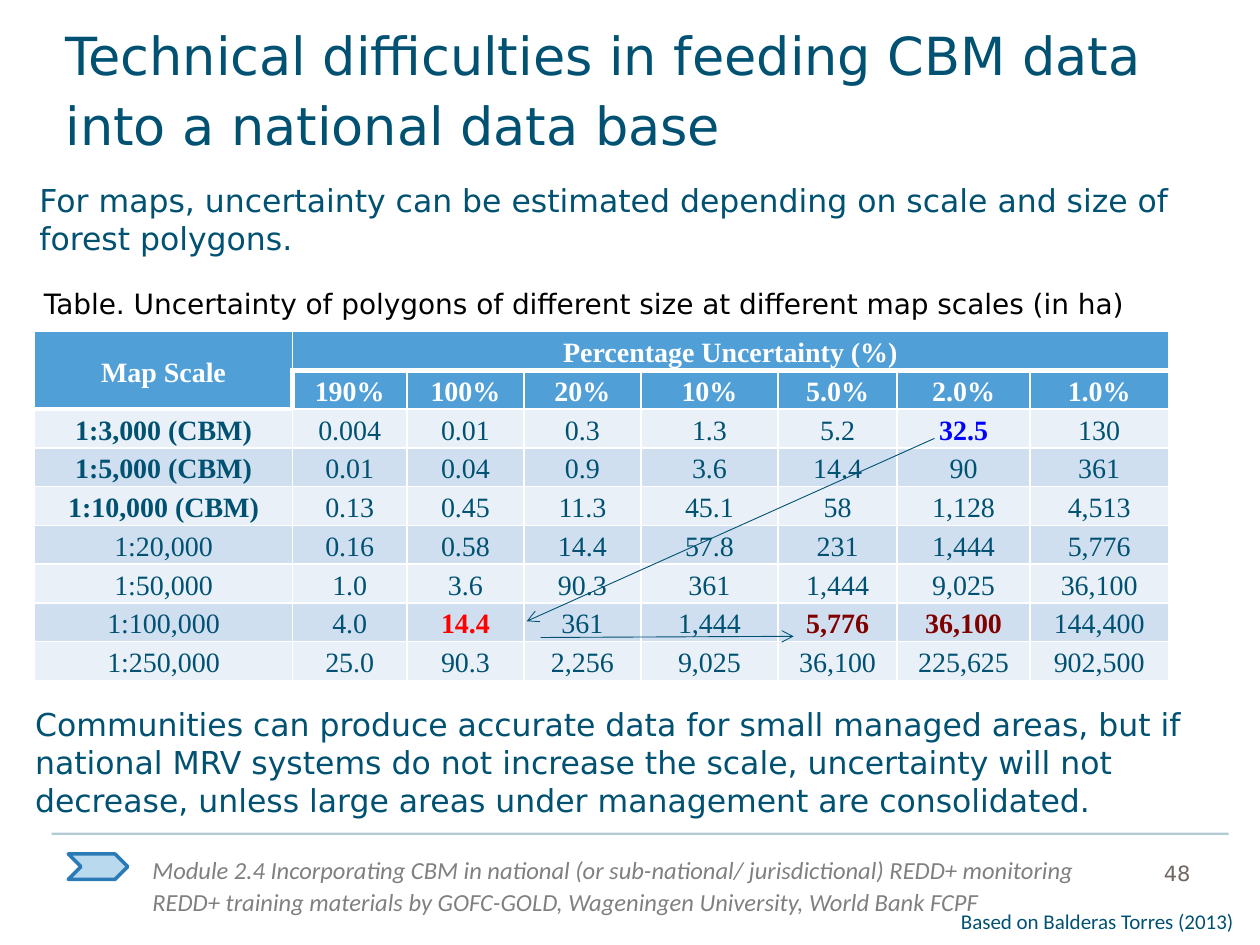
from lxml.etree import SubElement
from pptx import Presentation
from pptx.dml.color import RGBColor
from pptx.enum.shapes import MSO_CONNECTOR, MSO_SHAPE
from pptx.enum.text import MSO_ANCHOR, MSO_AUTO_SIZE, PP_ALIGN
from pptx.oxml.ns import qn
from pptx.util import Pt

NAVY, WHITE, HEADER_BLUE = "005172", "FFFFFF", "519FD7"
BANDS = ["E9F0F8", "D0DFF0"]


def color(value):
    return RGBColor.from_string(value)


def add_text(box, lines, size, font="DejaVu Sans", fill=NAVY, italic=None, spacing=None, wrap=True):
    """Add a text box; box is left, top, width, height in points."""
    shape = slide.shapes.add_textbox(*map(Pt, box))
    frame = shape.text_frame
    frame.word_wrap = wrap
    frame.auto_size = MSO_AUTO_SIZE.SHAPE_TO_FIT_TEXT
    for index, line in enumerate(lines):
        paragraph = frame.add_paragraph() if index else frame.paragraphs[0]
        if spacing:
            paragraph.line_spacing = Pt(spacing)
        run = paragraph.add_run()
        run.text = line
        run.font.name, run.font.size, run.font.italic = font, Pt(size), italic
        run.font.color.rgb = color(fill)
    return shape


presentation = Presentation()
presentation.slide_width, presentation.slide_height = Pt(720), Pt(540)
slide = presentation.slides.add_slide(presentation.slide_layouts[6])

# Footer
add_text((80, 484, 556.5, 44), [
    "Module 2.4 Incorporating CBM in national (or sub-national/ jurisdictional) REDD+ monitoring",
    "REDD+ training materials by GOFC-GOLD, Wageningen University, World Bank FCPF",
], 14, "Calibri", "808080", italic=True, spacing=18)
chevron = slide.shapes.add_shape(MSO_SHAPE.CHEVRON, Pt(39), Pt(488), Pt(34), Pt(14.5))
chevron.shadow.inherit = False
chevron.fill.solid()
chevron.fill.fore_color.rgb = color("B9D9EF")
chevron.line.color.rgb = color("297AB5")
chevron.line.width = Pt(2)
add_text((658, 484.5, 44, 24), ["48"], 12, fill="706762", spacing=18)

# Uncertainty table
scales = ["1:3,000 (CBM)", "1:5,000 (CBM)", "1:10,000 (CBM)", "1:20,000",
          "1:50,000", "1:100,000", "1:250,000"]
areas = [
    ["0.004", "0.01", "0.3", "1.3", "5.2", "32.5", "130"],
    ["0.01", "0.04", "0.9", "3.6", "14.4", "90", "361"],
    ["0.13", "0.45", "11.3", "45.1", "58", "1,128", "4,513"],
    ["0.16", "0.58", "14.4", "57.8", "231", "1,444", "5,776"],
    ["1.0", "3.6", "90.3", "361", "1,444", "9,025", "36,100"],
    ["4.0", "14.4", "361", "1,444", "5,776", "36,100", "144,400"],
    ["25.0", "90.3", "2,256", "9,025", "36,100", "225,625", "902,500"],
]
rows = [
    ["Map Scale", "Percentage Uncertainty (%)"] + [""] * 6,
    ["", "190%", "100%", "20%", "10%", "5.0%", "2.0%", "1.0%"],
] + [[scale] + values for scale, values in zip(scales, areas)]
highlights = {(2, 6): "0000FF", (7, 2): "FF0000", (7, 5): "800000", (7, 6): "800000"}
column_widths = [147.5, 65.3, 67, 66.7, 78.5, 68, 76, 79]

table = slide.shapes.add_table(len(rows), len(column_widths), Pt(19.7), Pt(189.5),
                               Pt(sum(column_widths)), Pt(199.35)).table
for column, width in zip(table.columns, column_widths):
    column.width = Pt(width)
for row_index, row in enumerate(rows):
    table.rows[row_index].height = Pt(22.15)
    is_header = row_index < 2
    for column_index, text in enumerate(row):
        cell = table.cell(row_index, column_index)
        cell.vertical_anchor = MSO_ANCHOR.MIDDLE
        cell.margin_left = cell.margin_right = Pt(5)
        cell.margin_top = cell.margin_bottom = Pt(0)
        # Borders precede the fill in the cell properties
        thick = {
            "L": (row_index, column_index) == (1, 1),
            "T": row_index == 1 or (row_index, column_index) == (2, 0),
            "B": row_index == 0 or (row_index, column_index) == (1, 0),
        }
        for side in "LRTB":
            border = SubElement(cell._tc.get_or_add_tcPr(), qn(f"a:ln{side}"),
                                w=str(Pt(3 if thick.get(side) else 1)))
            SubElement(SubElement(border, qn("a:solidFill")), qn("a:srgbClr"), val=WHITE)
        cell.fill.solid()
        cell.fill.fore_color.rgb = color(HEADER_BLUE if is_header else BANDS[row_index % 2])
        paragraph = cell.text_frame.paragraphs[0]
        paragraph.alignment = PP_ALIGN.CENTER
        paragraph.line_spacing = 1.15
        paragraph.font.size = Pt(16)
        if text:
            highlight = highlights.get((row_index, column_index))
            run = paragraph.add_run()
            run.text = text
            run.font.name, run.font.size = "Times New Roman", Pt(16)
            run.font.bold = is_header or bool(highlight) or "CBM" in text
            run.font.color.rgb = color(WHITE if is_header else highlight or NAVY)
table.cell(0, 0).merge(table.cell(1, 0))
table.cell(0, 1).merge(table.cell(0, 7))

# Footer rule, then the arrows between highlighted table values
for points, width, is_arrow in [
    ((29.5, 476.5, 702, 476.5), 1.25, False),
    ((534, 250.5, 301, 355), 0.5, True),
    ((309, 364.3, 453.5, 363.6), 0.5, True),
]:
    connector = slide.shapes.add_connector(MSO_CONNECTOR.STRAIGHT, *map(Pt, points))
    connector.line.color.rgb = color(NAVY)
    connector.line.width = Pt(width)
    line = connector.line._get_or_add_ln()
    if is_arrow:
        SubElement(line, qn("a:tailEnd"), type="arrow")
    else:
        SubElement(line.find(".//" + qn("a:srgbClr")), qn("a:alpha"), val="30000")
    SubElement(connector._element.spPr, qn("a:effectLst"))

# Body text
add_text((18, 160, 683, 26.5),
         ["Table. Uncertainty of polygons of different size at different map scales (in ha)"],
         16, fill="000000")
add_text((13, 399.5, 675.5, 73), [
    "Communities can produce accurate data for small managed areas, but if national MRV systems "
    "do not increase the scale, uncertainty will not decrease, unless large areas under management "
    "are consolidated."], 18)
add_text((542, 515.5, 172, 21.5), ["Based on Balderas Torres (2013)"], 12, "Calibri", wrap=False)
add_text((15.5, 100, 679, 51), [
    "For maps, uncertainty can be estimated depending on scale and size of forest polygons."], 18)

title = add_text((36, 7, 648, 85),
                 ["Technical difficulties in feeding CBM data into a national data base"],
                 30, spacing=40)
title.text_frame.auto_size = MSO_AUTO_SIZE.NONE
title.text_frame.margin_left, title.text_frame.margin_top = Pt(1.5), Pt(2)
title.text_frame.margin_bottom = Pt(0)

presentation.save("out.pptx")
